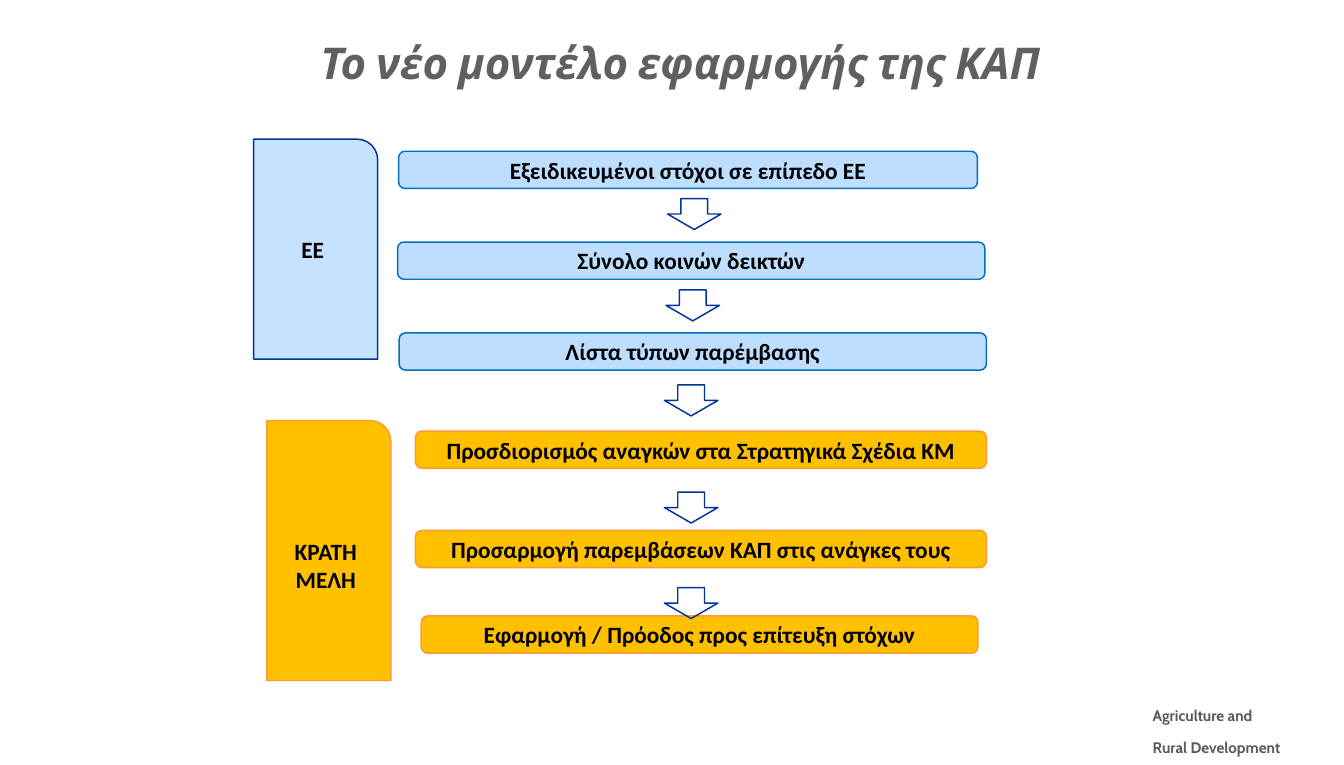
from pptx import Presentation
from pptx.util import Pt
from pptx.dml.color import RGBColor as RGB
from pptx.enum.shapes import MSO_SHAPE as Geo
from pptx.enum.text import PP_ALIGN as Align, MSO_ANCHOR as Anchor
from pptx.oxml.ns import qn
from lxml.etree import SubElement as Sub

HUES = {"white": "FFFFFF", "black": "000000", "title": "606060",
        "foot": "595959", "navy": "003399", "sky": "BDDEFF",
        "blue": "0070C0", "gold": "FFC000", "orange": "FF9933"}
WIDE, HIGH = 1842.5, 1049
PANEL, BAR, ARROW = 170, 51, (73.4, 42.5)


def hue(name):
    return RGB.from_string(HUES[name])


def write(shape, text, size=32, font="Calibri", color="black", italic=False,
          align=Align.CENTER, anchor=Anchor.MIDDLE, wrap=True, base=0):
    frame = shape.text_frame
    frame.word_wrap = wrap
    frame.vertical_anchor = anchor
    for i, line in enumerate(text.split("\n")):
        para = frame.add_paragraph() if i else frame.paragraphs[0]
        para.alignment = align
        run = para.add_run()
        run.text = line
        face = run.font
        face.size, face.name = Pt(size), font
        face.bold, face.italic = True, italic
        face.color.rgb = hue(color)
        if base:
            run._r.get_or_add_rPr().set("baseline", str(base * 1000))


def draw(slide, geo, box, line, fill=None, alpha=100):
    shape = slide.shapes.add_shape(geo, *map(Pt, box))
    shape.shadow.inherit = False
    shape.line.color.rgb = hue(line)
    shape.line.width = Pt(2)
    if fill:
        shape.fill.solid()
        shape.fill.fore_color.rgb = hue(fill)
        if alpha < 100:
            tint = shape._element.spPr.find(qn("a:solidFill"))[0]
            Sub(tint, qn("a:alpha"), val=str(alpha * 1000))
    else:
        shape.fill.background()
    return shape


def title(slide, box):
    area = slide.shapes.add_textbox(*map(Pt, box))
    write(area, "Το νέο μοντέλο εφαρμογής της ΚΑΠ", size=60, font="Cabin",
          color="title", italic=True, anchor=Anchor.TOP)


def footer(slide, box):
    area = slide.shapes.add_textbox(*map(Pt, box))
    write(area, "Agriculture and\nRural Development", size=36, font="Cabin",
          color="foot", align=Align.LEFT, anchor=Anchor.TOP, wrap=False,
          base=30)


def stage(slide, box, label, rows, fill, edge, rim, alpha=100, drop=0):
    """Side panel with its steps; row offsets start at the panel corner."""
    left, top = box[:2]
    panel = draw(slide, Geo.ROUND_1_RECTANGLE, box, rim, fill, alpha)
    write(panel, label)
    panel.text_frame.margin_top = Pt(3.6 + drop)
    for text, x, y, width in rows:
        bar = draw(slide, Geo.ROUNDED_RECTANGLE,
                   (left + x, top + y, width, BAR), edge, fill)
        write(bar, text)


def arrows(slide, left, top, spots):
    for x, y in spots:
        draw(slide, Geo.DOWN_ARROW, (left + x, top + y, *ARROW), "navy")


def main():
    deck = Presentation()
    deck.slide_width, deck.slide_height = Pt(WIDE), Pt(HIGH)
    slide = deck.slides.add_slide(deck.slide_layouts[6])
    slide.background.fill.solid()
    slide.background.fill.fore_color.rgb = hue("white")

    # Heading and footer
    title(slide, (224, 45.4, 1417.7, 124))
    footer(slide, (1573.2, 961.2, 226.8, 65.5))

    # Union level
    stage(slide, (347.8, 190.8, PANEL, 301.7), "ΕΕ", [
        ("Εξειδικευμένοι στόχοι σε επίπεδο ΕΕ", 198.7, 16.6, 793.4),
        ("Σύνολο κοινών δεικτών", 197.3, 141.1, 805),
        ("Λίστα τύπων παρέμβασης", 199.4, 265.7, 805),
    ], "sky", "blue", "navy", alpha=85)

    # Member states
    stage(slide, (365.8, 576.7, PANEL, 356.4), "ΚΡΑΤΗ ΜΕΛΗ", [
        ("Προσδιορισμός αναγκών στα Στρατηγικά Σχέδια ΚΜ", 203.8, 14.4, 782.6),
        ("Προσαρμογή παρεμβάσεων ΚΑΠ στις ανάγκες τους", 203.8, 150.5, 782.6),
        ("Εφαρμογή / Πρόοδος προς επίτευξη στόχων", 211.7, 267.9, 763.2),
    ], "gold", "orange", "orange", drop=40)

    # Flow between steps
    arrows(slide, 910.8, 272.2, [(4.3, 0), (2.2, 125.3), (0, 255.6),
                                 (0, 402.5), (0, 533.5)])
    deck.save("out.pptx")


if __name__ == "__main__":
    main()
